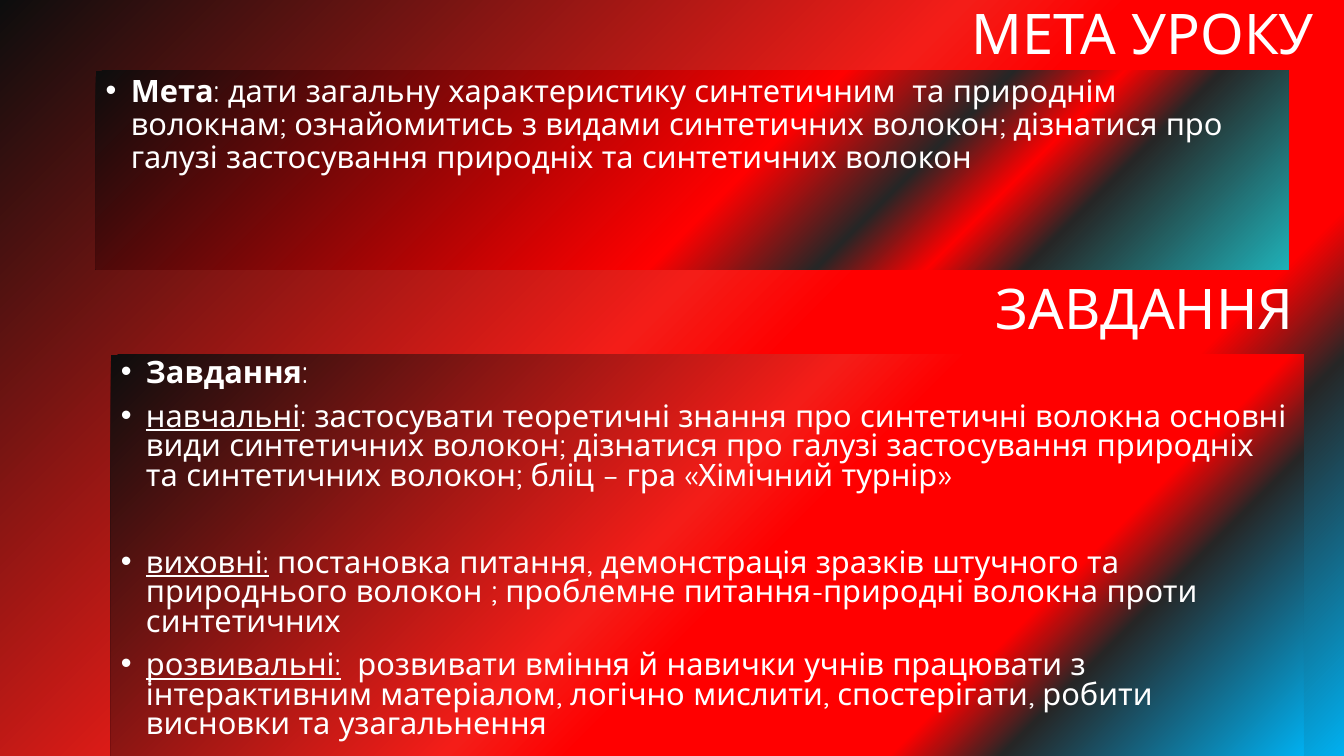
from lxml import etree
from pptx import Presentation
from pptx.dml.color import RGBColor
from pptx.enum.shapes import MSO_SHAPE
from pptx.enum.text import MSO_ANCHOR, PP_ALIGN
from pptx.oxml.ns import qn
from pptx.util import Inches, Pt

RECTANGLE = MSO_SHAPE.RECTANGLE
TOP, MIDDLE = MSO_ANCHOR.TOP, MSO_ANCHOR.MIDDLE
LEFT, RIGHT = PP_ALIGN.LEFT, PP_ALIGN.RIGHT

COLORS = {
    "text": "FFFFFF",
    "black": "0D0D0D",
    "scarlet": "F41D18",
    "red": "FF0000",
    "gray": "262626",
    "blue": "00B0F0",
    "teal": "1FB0B7",
}
BLUE_FADE = [(0, "black"), (46, "scarlet"), (54, "red"), (74, "red"), (81, "gray"), (100, "blue")]
TEAL_FADE = [(0, "black"), (54, "red"), (66, "gray"), (74, "red"), (81, "gray"), (100, "teal")]

GOAL = [
    (0, [("Мета", "bold"),
         (": дати загальну характеристику синтетичним  та природнім волокнам; "
          "ознайомитись з видами синтетичних волокон; дізнатися про галузі "
          "застосування природніх та синтетичних волокон", "")]),
]
TASKS = [
    (0, [("Завдання", "bold"), (":", "")]),
    (10, [("навчальні", "underline"),
          (": застосувати теоретичні знання про синтетичні волокна основні види "
           "синтетичних волокон; дізнатися про галузі застосування природніх та "
           "синтетичних волокон; бліц – гра «Хімічний турнір»", "")]),
    (41, [("виховні:", "underline"),
          (" постановка питання, демонстрація зразків штучного та природнього "
           "волокон ; проблемне питання-природні волокна проти синтетичних", "")]),
    (10, [("розвивальні:", "underline"),
          ("  розвивати вміння й навички учнів працювати з інтерактивним матеріалом, "
           "логічно мислити, спостерігати, робити висновки та узагальнення", "")]),
]


class LessonSlide:
    font_name = "Quicksand"
    heading_size = 40
    body_size = 22

    def __init__(self, slide):
        self.slide = slide

    def gradient(self, fill, owner, stops):
        fill.gradient()
        fill.gradient_angle = 315
        stop_list = next(owner.iter(qn("a:gsLst")))
        for stop in list(stop_list):
            stop_list.remove(stop)
        for percent, color in stops:
            stop = etree.SubElement(stop_list, qn("a:gs"), pos=str(percent * 1000))
            etree.SubElement(stop, qn("a:srgbClr"), val=COLORS[color])

    def background(self, stops):
        self.gradient(self.slide.background.fill, self.slide.element, stops)

    def run(self, paragraph, text, size, emphasis=""):
        run = paragraph.add_run()
        run.text = text
        font = run.font
        font.name = self.font_name
        font.size = Pt(size)
        font.color.rgb = RGBColor.from_string(COLORS["text"])
        font.bold = emphasis == "bold"
        font.underline = emphasis == "underline"

    def heading(self, text, left, top):
        box = self.slide.shapes.add_textbox(
            Inches(left), Inches(top), Inches(4.06), Inches(0.72))
        frame = box.text_frame
        frame.word_wrap = True
        frame.vertical_anchor = MIDDLE
        paragraph = frame.paragraphs[0]
        paragraph.alignment = RIGHT
        paragraph.line_spacing = 0.9
        self.run(paragraph, text, self.heading_size)

    def bullet(self, paragraph):
        properties = paragraph._p.get_or_add_pPr()
        properties.set("marL", str(Inches(0.25)))
        properties.set("indent", str(-Inches(0.25)))
        etree.SubElement(properties, qn("a:buFont"), typeface="Arial")
        etree.SubElement(properties, qn("a:buChar"), char="•")

    def panel(self, items, left, top, height, stops, line_spacing):
        panel = self.slide.shapes.add_shape(
            RECTANGLE, Inches(left), Inches(top), Inches(11.83), Inches(height))
        panel.shadow.inherit = False
        panel.line.fill.background()
        self.gradient(panel.fill, panel.element, stops)
        frame = panel.text_frame
        frame.word_wrap = True
        frame.vertical_anchor = TOP
        for index, (space_before, runs) in enumerate(items):
            paragraph = frame.add_paragraph() if index else frame.paragraphs[0]
            self.bullet(paragraph)
            paragraph.alignment = LEFT
            paragraph.line_spacing = line_spacing
            paragraph.space_before = Pt(space_before)
            for text, emphasis in runs:
                self.run(paragraph, text, self.body_size, emphasis)


def main():
    presentation = Presentation()
    presentation.slide_width = Inches(13.33)
    presentation.slide_height = Inches(7.5)
    lesson = LessonSlide(presentation.slides.add_slide(presentation.slide_layouts[6]))
    lesson.background(BLUE_FADE)
    lesson.heading("МЕТА УРОКУ", 9.07, 0)
    lesson.panel(GOAL, 0.95, 0.7, 1.97, TEAL_FADE, 0.9)
    lesson.heading("ЗАВДАННЯ", 8.87, 2.73)
    lesson.panel(TASKS, 1.1, 3.52, 3.98, BLUE_FADE, 0.8)
    presentation.save("out.pptx")


if __name__ == "__main__":
    main()
